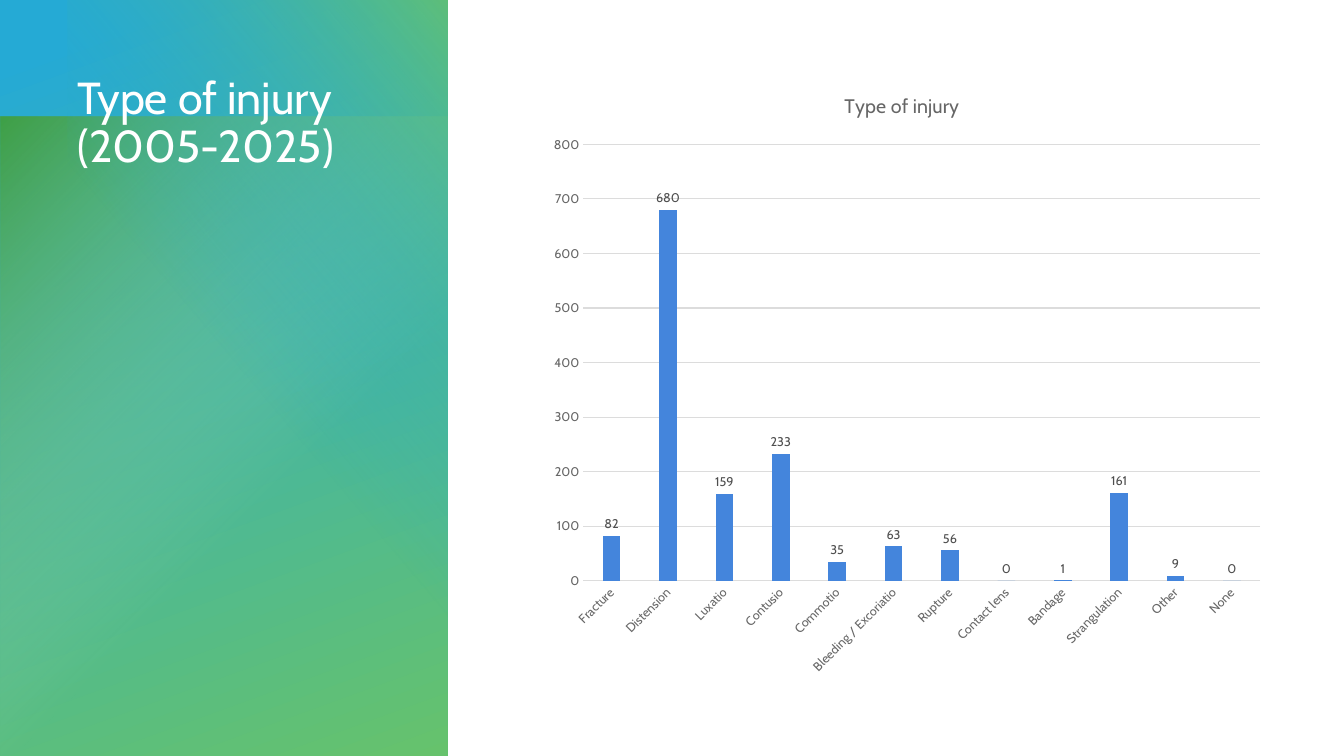
from lxml import etree
from pptx import Presentation
from pptx.chart.data import CategoryChartData
from pptx.dml.color import RGBColor
from pptx.enum.chart import XL_CHART_TYPE as ChartType, XL_LABEL_POSITION as LabelPosition, XL_TICK_MARK as TickMark
from pptx.enum.shapes import MSO_SHAPE as Preset
from pptx.oxml import parse_xml
from pptx.oxml.ns import nsdecls, qn
from pptx.util import Cm, Pt

COLORS = {
    "blue": "25AAD5", "green": "66C26C", "forest": "3F9F46", "mint": "A3DAA7",
    "white": "FFFFFF", "bar": "4485DC", "axis": "666666", "grid": "DCDCDC",
    "label": "4E4E4E", "text": "131313",
}
INJURIES = {
    "Fracture": 82, "Distension": 680, "Luxatio": 159, "Contusio": 233,
    "Commotio": 35, "Bleeding / Excoriatio": 63, "Rupture": 56,
    "Contact lens": 0, "Bandage": 1, "Strangulation": 161, "Other": 9, "None": 0,
}


class SlideBuilder:
    font_name = "Cabin"

    def __init__(self, presentation):
        self.slide = presentation.slides.add_slide(presentation.slide_layouts[6])

    def color(self, name):
        return RGBColor.from_string(COLORS[name])

    def style_font(self, font, size, color):
        font.name = self.font_name
        font.size = Pt(size)
        font.bold = False
        font.color.rgb = self.color(color)

    def style_line(self, line):
        line.color.rgb = self.color("grid")
        line.width = Pt(0.75)

    def gradient_panel(self, box, stops, direction, rotation=0):
        shape = self.slide.shapes.add_shape(Preset.RECTANGLE, *map(Cm, box))
        shape.rotation = rotation
        shape.shadow.inherit = False
        shape.line.fill.background()
        stop_xml = "".join(
            f'<a:gs pos="{position * 1000}"><a:srgbClr val="{COLORS[name]}">'
            f'<a:alpha val="{alpha * 1000}"/></a:srgbClr></a:gs>'
            for position, name, alpha in stops
        )
        gradient = parse_xml(
            f'<a:gradFill {nsdecls("a")} rotWithShape="1">'
            f"<a:gsLst>{stop_xml}</a:gsLst>{direction}</a:gradFill>"
        )
        shape._element.spPr.find(qn("a:prstGeom")).addnext(gradient)

    def title(self, box, text):
        text_frame = self.slide.shapes.add_textbox(*map(Cm, box)).text_frame
        text_frame.word_wrap = True
        text_frame.text = text
        paragraph = text_frame.paragraphs[0]
        paragraph.line_spacing = 0.9
        self.style_font(paragraph.runs[0].font, 32, "white")

    def place(self, element, index, **settings):
        layout = element.find(qn("c:layout"))
        if layout is not None:
            element.remove(layout)
        layout = etree.Element(qn("c:layout"))
        element.insert(index, layout)
        manual = etree.SubElement(layout, qn("c:manualLayout"))
        for tag, value in settings.items():
            etree.SubElement(manual, qn(f"c:{tag}")).set("val", str(value))

    def style_axis(self, axis):
        axis.major_tick_mark = axis.minor_tick_mark = TickMark.NONE
        self.style_font(axis.tick_labels.font, 9, "axis")

    def column_chart(self, box, title, values):
        data = CategoryChartData()
        data.categories = list(values)
        data.add_series("Series 1", list(values.values()))
        chart = self.slide.shapes.add_chart(
            ChartType.COLUMN_CLUSTERED, *map(Cm, box), data).chart
        self.style_font(chart.font, 10, "text")
        chart.has_legend = False
        chart.has_title = True
        chart.chart_title.text_frame.text = title
        run = chart.chart_title.text_frame.paragraphs[0].runs[0]
        self.style_font(run.font, 14, "axis")

        self.style_axis(chart.category_axis)
        self.style_line(chart.category_axis.format.line)
        body = chart.category_axis._element.find(qn("c:txPr")).find(qn("a:bodyPr"))
        body.set("rot", "-2700000")
        value_axis = chart.value_axis
        self.style_axis(value_axis)
        value_axis.format.line.fill.background()
        self.style_line(value_axis.major_gridlines.format.line)
        value_axis.minimum_scale, value_axis.maximum_scale = 0, 800
        value_axis.major_unit = 100

        plot = chart.plots[0]
        plot.gap_width, plot.overlap = 219, -27
        plot.vary_by_categories = False
        series = plot.series[0]
        series.format.fill.solid()
        series.format.fill.fore_color.rgb = self.color("bar")
        labels = series.data_labels
        labels.show_value = True
        labels.position = LabelPosition.OUTSIDE_END
        self.style_font(labels.font, 9, "label")

        self.place(chart.chart_title._element, 1, xMode="edge", yMode="edge", x=0.41, y=0.03)
        self.place(chart._chartSpace.chart.plotArea, 0, layoutTarget="inner",
                   xMode="edge", yMode="edge", x=0.06, y=0.12, w=0.92, h=0.71)


def main():
    presentation = Presentation()
    presentation.slide_width, presentation.slide_height = Cm(33.87), Cm(19.05)
    builder = SlideBuilder(presentation)
    builder.gradient_panel(
        (0, 0, 11.28, 19.08), [(7, "blue", 100), (100, "green", 100)],
        '<a:lin ang="4200000" scaled="0"/>')
    builder.gradient_panel(
        (0, 2.95, 11.28, 16.13), [(0, "forest", 100), (60, "mint", 0)],
        '<a:path path="circle"><a:fillToRect r="100000" b="100000"/></a:path>', 180)
    builder.gradient_panel(
        (-1.45, 3.15, 15.88, 9.58), [(0, "green", 86), (57, "blue", 0)],
        '<a:lin ang="13800000" scaled="0"/>', 270)
    builder.title((1.7, 1.78, 8.56, 11.15), "Type of injury (2005-2025)")
    builder.column_chart((13.59, 1.78, 18.54, 15.49), "Type of injury", INJURIES)
    presentation.save("out.pptx")


if __name__ == "__main__":
    main()
